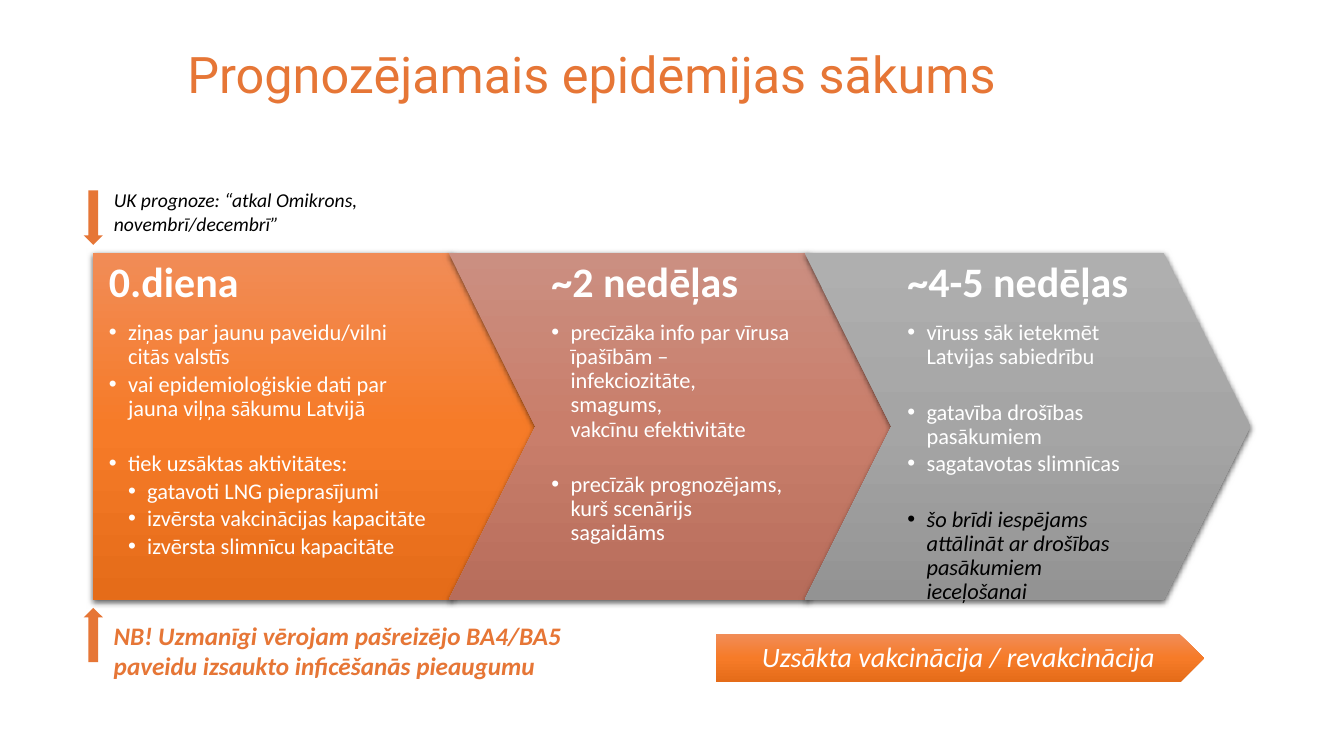
from collections import namedtuple
from copy import deepcopy

from lxml.etree import SubElement
from pptx import Presentation
from pptx.dml.color import RGBColor
from pptx.enum.shapes import MSO_SHAPE
from pptx.enum.text import MSO_ANCHOR, MSO_AUTO_SIZE, PP_ALIGN
from pptx.oxml.ns import qn
from pptx.util import Inches, Pt

Box = namedtuple("Box", "left top width height")
Line = namedtuple("Line", "text level gap style", defaults=(1, 0, {}))

WIDTH, HEIGHT = 13.33, 7.5
WHITE = RGBColor(0xFF, 0xFF, 0xFF)
BLACK = RGBColor(0x00, 0x00, 0x00)
ACCENT = RGBColor(0xE6, 0x76, 0x36)
ORANGE = [RGBColor(0xF1, 0x8C, 0x57), RGBColor(0xF6, 0x7B, 0x28), RGBColor(0xE5, 0x6C, 0x19)]
ROSE = [RGBColor(0xCB, 0x8F, 0x81), RGBColor(0xC9, 0x7E, 0x6B), RGBColor(0xB7, 0x6D, 0x5B)]
GREY = [RGBColor(0xAF, 0xAF, 0xAF), RGBColor(0xA5, 0xA5, 0xA5), RGBColor(0x93, 0x93, 0x93)]

TITLE = {"name": "Roboto", "size": Pt(36), "color": ACCENT}
HEADING = {"name": "Calibri", "size": Pt(30), "color": WHITE, "bold": True}
BODY = {"name": "Calibri", "size": Pt(16), "color": WHITE}
FORECAST = {"name": "Calibri", "size": Pt(14), "color": BLACK, "italic": True}
WARNING = {"name": "Calibri", "size": Pt(18), "color": ACCENT, "bold": True, "italic": True}
BANNER = {"name": "Calibri", "size": Pt(20), "color": WHITE, "italic": True}

PITCH = 3.53
STAGE = Box(0.92, 2.51, 4.42, 3.44)
POINT = 0.25
INDENT = 0.19
BLANK_LINE = 20

STAGES = [
    ("0.diena", ORANGE, [
        Line("ziņas par jaunu paveidu/vilni citās valstīs"),
        Line("vai epidemioloģiskie dati par jauna viļņa sākumu Latvijā"),
        Line("tiek uzsāktas aktivitātes:", gap=BLANK_LINE),
        Line("gatavoti LNG pieprasījumi", 2),
        Line("izvērsta vakcinācijas kapacitāte", 2),
        Line("izvērsta slimnīcu kapacitāte", 2),
    ]),
    ("~2 nedēļas", ROSE, [
        Line("precīzāka info par vīrusa īpašībām – infekciozitāte, smagums,\vvakcīnu efektivitāte"),
        Line("precīzāk prognozējams, kurš scenārijs sagaidāms", gap=BLANK_LINE),
    ]),
    ("~4-5 nedēļas", GREY, [
        Line("vīruss sāk ietekmēt Latvijas sabiedrību"),
        Line("gatavība drošības pasākumiem", gap=BLANK_LINE),
        Line("sagatavotas slimnīcas"),
        Line("šo brīdi iespējams attālināt ar drošības pasākumiem ieceļošanai",
             gap=BLANK_LINE, style={"color": BLACK, "italic": True}),
    ]),
]


def lengths(box):
    return [Inches(value) for value in box]


def write(para, text, style, **layout):
    para.text = text
    for name, value in layout.items():
        setattr(para, name, value)
    for span in para.runs:
        for name, value in style.items():
            if name == "color":
                span.font.color.rgb = value
            else:
                setattr(span.font, name, value)
    for line_break in para._p.findall(qn("a:br")):
        line_break.insert(0, deepcopy(para.runs[0]._r.rPr))


def add_frame(page, box, insets=(0.1, 0.05, 0.1, 0.05), **layout):
    frame = page.shapes.add_textbox(*lengths(box)).text_frame
    sides = ("margin_left", "margin_top", "margin_right", "margin_bottom")
    values = {"word_wrap": True, **dict(zip(sides, map(Inches, insets))), **layout}
    for name, value in values.items():
        setattr(frame, name, value)
    return frame


def add_bullet(para, level):
    props = para._p.get_or_add_pPr()
    props.set("marL", str(Inches(INDENT * level)))
    props.set("indent", str(-Inches(INDENT)))
    SubElement(props, qn("a:buFont"), typeface="Arial")
    SubElement(props, qn("a:buChar"), char="•")


def add_plain_shape(page, preset, box):
    shape = page.shapes.add_shape(preset, *lengths(box))
    shape.line.fill.background()
    shape.shadow.inherit = False
    return shape


def fill_gradient(shape, colours):
    shape.fill.gradient()
    shape.fill.gradient_angle = 270
    stop_list = shape._element.spPr.find(".//" + qn("a:gsLst"))
    stop_list.insert(1, deepcopy(stop_list[0]))
    for index, (stop, colour) in enumerate(zip(shape.fill.gradient_stops, colours)):
        stop.position = index / 2
        stop.color.rgb = colour


def add_shadow(shape):
    effects = shape._element.spPr.find(qn("a:effectLst"))
    shadow = SubElement(effects, qn("a:outerShdw"), blurRad=str(Pt(4.5)),
                        dist=str(Pt(1.5)), dir="5400000", algn="ctr", rotWithShape="0")
    colour = SubElement(shadow, qn("a:srgbClr"), val="000000")
    SubElement(colour, qn("a:alpha"), val="63000")


def add_title(page, box):
    frame = add_frame(page, box, vertical_anchor=MSO_ANCHOR.MIDDLE)
    write(frame.paragraphs[0], "Prognozējamais epidēmijas sākums", TITLE, line_spacing=0.9)


def add_stage(page, box, first, heading, colours, lines):
    preset = MSO_SHAPE.PENTAGON if first else MSO_SHAPE.CHEVRON
    shape = add_plain_shape(page, preset, box)
    shape.adjustments[0] = POINT
    fill_gradient(shape, colours)
    add_shadow(shape)
    notch = POINT * box.height
    if first:
        text_box = box._replace(width=box.width - notch / 2)
        insets = (0.16, 0.08, 0.62, 0.08)
    else:
        text_box = box._replace(left=box.left + notch, width=box.width - 2 * notch)
        insets = (0.16, 0.08, 0.16, 0.08)
    frame = add_frame(page, text_box, insets)
    write(frame.paragraphs[0], heading, HEADING, line_spacing=0.9, space_after=Pt(10.5))
    for line in lines:
        para = frame.add_paragraph()
        add_bullet(para, line.level)
        write(para, line.text, {**BODY, **line.style}, line_spacing=0.9,
              space_before=Pt(line.gap), space_after=Pt(2.4))


def add_note(page, box, lines, style, arrow_top, rotation):
    frame = add_frame(page, box, auto_size=MSO_AUTO_SIZE.SHAPE_TO_FIT_TEXT)
    for index, text in enumerate(lines):
        para = frame.add_paragraph() if index else frame.paragraphs[0]
        write(para, text, style)
    arrow = add_plain_shape(page, MSO_SHAPE.UP_ARROW, Box(box.left - 0.2, arrow_top, 0.19, 0.54))
    arrow.rotation = rotation
    arrow.fill.solid()
    arrow.fill.fore_color.rgb = ACCENT


def add_banner(page, box):
    fill_gradient(add_plain_shape(page, MSO_SHAPE.PENTAGON, box), ORANGE)
    frame = add_frame(page, box._replace(width=box.width - box.height / 4),
                      (0.12, 0.06, 0.03, 0.06), vertical_anchor=MSO_ANCHOR.MIDDLE)
    write(frame.paragraphs[0], "Uzsākta vakcinācija / revakcinācija", BANNER,
          alignment=PP_ALIGN.CENTER, line_spacing=0.9)


def main():
    deck = Presentation()
    deck.slide_width, deck.slide_height = Inches(WIDTH), Inches(HEIGHT)
    page = deck.slides.add_slide(deck.slide_layouts[6])
    add_title(page, Box(1.76, 0.04, 10.69, 1.45))
    for index, stage in enumerate(STAGES):
        add_stage(page, STAGE._replace(left=STAGE.left + index * PITCH), index == 0, *stage)
    add_banner(page, Box(7.1, 6.29, 4.84, 0.48))
    add_note(page, Box(1.03, 1.82, 2.78, 0.57),
             ["UK prognoze: “atkal Omikrons,", "novembrī/decembrī”"], FORECAST, 1.89, 180)
    add_note(page, Box(1.03, 6.1, 4.84, 0.71),
             ["NB! Uzmanīgi vērojam pašreizējo BA4/BA5 paveidu izsaukto inficēšanās pieaugumu"],
             WARNING, 6.03, 0)
    deck.save("out.pptx")


if __name__ == "__main__":
    main()
